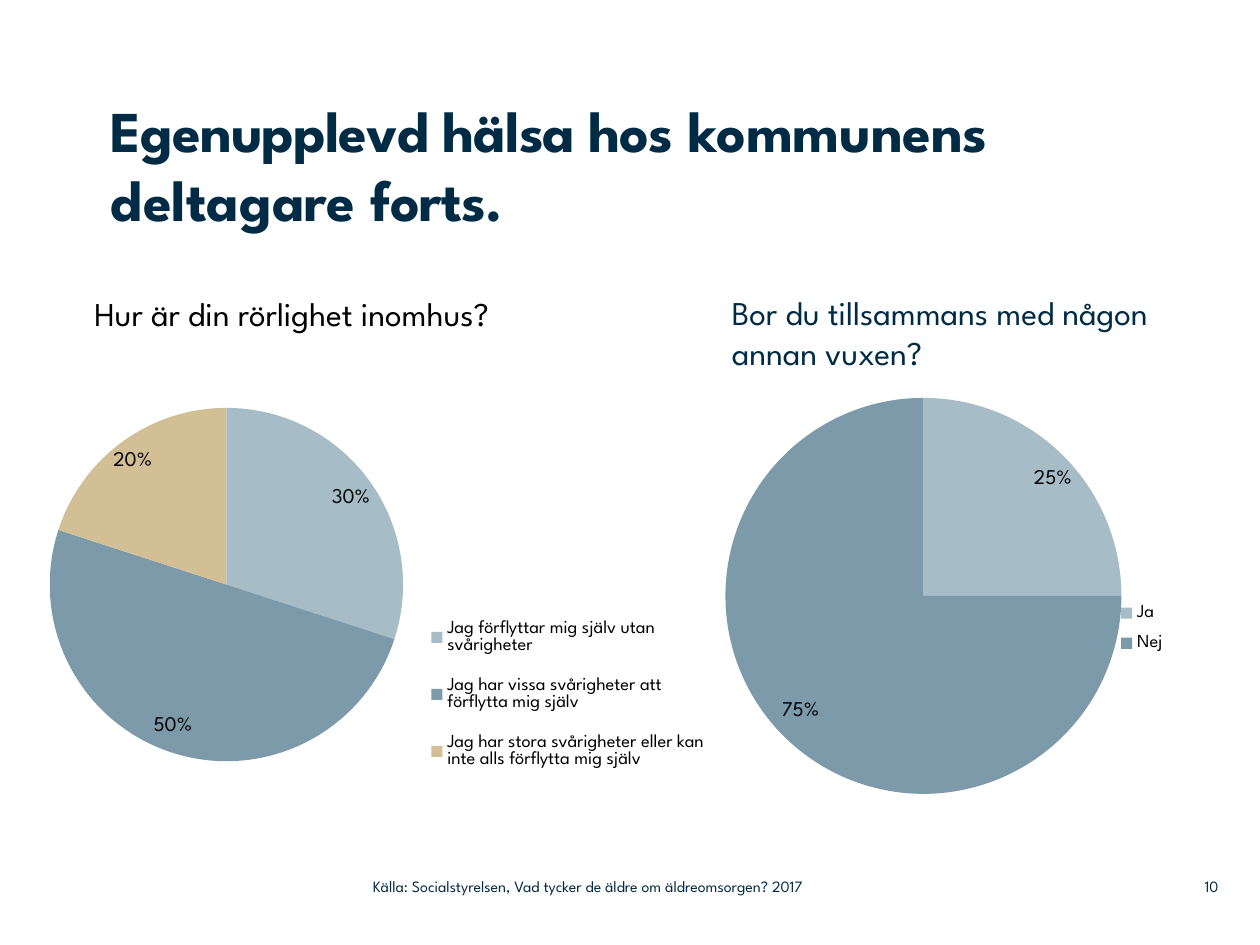
import pptx
import pptx.chart.data
import pptx.dml.color
import pptx.enum.chart
import pptx.enum.text
import pptx.oxml
import pptx.oxml.ns
import pptx.util
from pptx.util import Inches

FONT = "League Spartan"
NAVY = "002B45"
BLACK = "000000"
SLICE_COLORS = ["A6BCC6", "7D9AAA", "D3BF96"]


def color(value):
    """Turn a hex string into a colour."""
    return pptx.dml.color.RGBColor.from_string(value)


def style_font(font, size, value=BLACK, bold=False):
    """Give a font the slide's typeface with a size and colour."""
    font.name = FONT
    font.size = pptx.util.Pt(size)
    font.bold = bold
    font.color.rgb = color(value)


def add_text(slide, place, runs, size, value=NAVY, bold=False, inset=(0, 0),
             anchor="TOP", align="LEFT"):
    """Add a text box from (text, letter spacing in points) runs."""
    box = slide.shapes.add_textbox(*[Inches(length) for length in place])
    frame = box.text_frame
    frame.word_wrap = True
    frame.margin_left = frame.margin_right = Inches(inset[0])
    frame.margin_top = frame.margin_bottom = Inches(inset[1])
    frame.vertical_anchor = pptx.enum.text.MSO_ANCHOR[anchor]
    para = frame.paragraphs[0]
    para.alignment = pptx.enum.text.PP_ALIGN[align]
    for text, spacing in runs:
        span = para.add_run()
        span.text = text
        style_font(span.font, size, value, bold)
        if spacing:
            span.font._element.set("spc", str(int(spacing * 100)))


def add_layout(parent, position, index=1, mode="edge", target=""):
    """Place a chart part by fractions of the chart's size."""
    for old in parent.findall(pptx.oxml.ns.qn("c:layout")):
        parent.remove(old)
    modes = f'<c:xMode val="{mode}"/><c:yMode val="{mode}"/>'
    sizes = "".join(f'<c:{name} val="{part}"/>' for name, part in zip("xywh", position))
    layout = pptx.oxml.parse_xml(
        f'<c:layout {pptx.oxml.ns.nsdecls("c")}><c:manualLayout>'
        f"{target}{modes}{sizes}</c:manualLayout></c:layout>")
    parent.insert(index, layout)


def set_flag(parent, name, value):
    """Set every chart flag of one name below an element."""
    for flag in parent.iter(pptx.oxml.ns.qn(f"c:{name}")):
        flag.set("val", value)


def add_labels(series, shifts):
    """Show percentages inside the slices, each moved by its shift."""
    inside = pptx.enum.chart.XL_LABEL_POSITION.INSIDE_END
    labels = series.data_labels
    labels.show_percentage = True
    labels.show_value = False
    labels.number_format = "0%"
    labels.number_format_is_linked = False
    labels.position = inside
    style_font(labels.font, 12)
    for index, shift in enumerate(shifts):
        label = series.points[index].data_label
        style_font(label.font, 12)
        label.position = inside
    for element, shift in zip(labels._element.findall(pptx.oxml.ns.qn("c:dLbl")), shifts):
        add_layout(element, shift, mode="factor")
    set_flag(labels._element, "showVal", "0")
    set_flag(labels._element, "showPercent", "1")
    set_flag(labels._element, "showLeaderLines", "0")


def add_pie(slide, place, answers, plot_position, legend_position, label_shifts):
    """Add a pie chart with percentages and a legend on the right."""
    data = pptx.chart.data.CategoryChartData()
    data.categories = list(answers)
    data.add_series("Series 1", list(answers.values()))
    chart = slide.shapes.add_chart(
        pptx.enum.chart.XL_CHART_TYPE.PIE,
        *[Inches(length) for length in place], data).chart
    chart.has_title = False
    style_font(chart.font, 10)
    chart.has_legend = True
    chart.legend.position = pptx.enum.chart.XL_LEGEND_POSITION.RIGHT
    chart.legend.include_in_layout = False
    style_font(chart.legend.font, 10.5)
    plot = chart.plots[0]
    plot.vary_by_categories = True
    for index in range(len(answers)):
        fill = plot.series[0].points[index].format.fill
        fill.solid()
        fill.fore_color.rgb = color(SLICE_COLORS[index])
    add_labels(plot.series[0], label_shifts)
    add_layout(chart._chartSpace.chart.plotArea, plot_position, index=0,
               target='<c:layoutTarget val="inner"/>')
    add_layout(chart.legend._element, legend_position)


def main():
    """Build the slide and save it."""
    deck = pptx.Presentation()
    deck.slide_width, deck.slide_height = Inches(10), Inches(7.5)
    page = deck.slides.add_slide(deck.slide_layouts[6])
    add_text(page, (0.88, 0.75, 8.02, 1.42),
             [("Egenupplevd hälsa hos ", -0.5), ("kommunens deltagare ", 0),
              ("forts.", -0.5)], 33, bold=True)
    add_text(page, (9.2, 6.89, 0.47, 0.29), [("10", 0)], 9,
             anchor="MIDDLE", align="RIGHT")
    add_text(page, (2.96, 6.89, 4.43, 0.29),
             [("Källa: Socialstyrelsen, Vad tycker de äldre om äldreomsorgen? 2017", 0)],
             9, anchor="MIDDLE")
    add_text(page, (0.65, 2.28, 4.07, 0.42),
             [("Hur är din rörlighet inomhus?", 0)], 19, BLACK, inset=(0.1, 0.05))
    add_text(page, (5.71, 2.27, 3.71, 0.74),
             [("Bor du tillsammans med någon annan vuxen?", 0)], 19, inset=(0.1, 0.05))
    add_pie(page, (4.89, 3.02, 5.42, 3.42), {"Ja": 25, "Nej": 75},
            (0.16, 0.04, 0.58, 0.92), (0.72, 0.49, 0.1, 0.17),
            [(0.02, 0.02), (-0.01, -0.02)])
    mobility = {
        "Jag förflyttar mig själv utan svårigheter": 30,
        "Jag har vissa svårigheter att förflytta mig själv": 50,
        "Jag har stora svårigheter eller kan inte alls förflytta mig själv": 20,
    }
    add_pie(page, (0.28, 2.93, 5.42, 3.42), mobility,
            (0.02, 0.09, 0.52, 0.82), (0.57, 0.53, 0.42, 0.45),
            [(0.01, 0.01), (-0.03, -0.02), (-0.02, 0.01)])
    deck.save("out.pptx")


if __name__ == "__main__":
    main()
